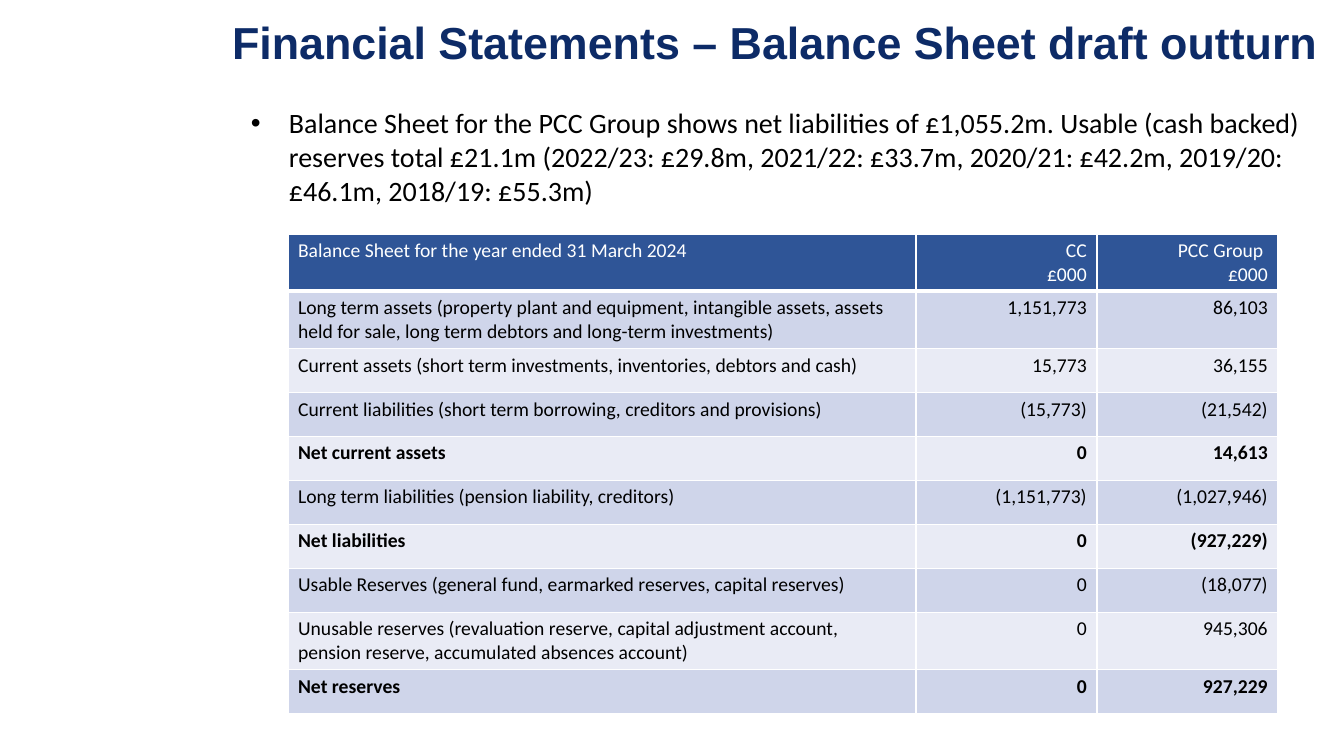
from lxml.etree import SubElement
from pptx import Presentation
from pptx.dml.color import RGBColor
from pptx.enum.text import MSO_ANCHOR, MSO_AUTO_SIZE, PP_ALIGN
from pptx.oxml import parse_xml
from pptx.oxml.ns import nsdecls, qn
from pptx.util import Pt

SLIDE_W, SLIDE_H = 1344, 756
SCALE = 12192000 / SLIDE_W
COLORS = {"navy": "0D2B67", "black": "000000", "white": "FFFFFF",
          "header": "2F5597", "band": "CFD5EA", "light": "E9EBF5"}

TITLE = "Financial Statements – Balance Sheet draft outturn"
SUMMARY = ("Balance Sheet for the PCC Group shows net liabilities of £1,055.2m. "
           "Usable (cash backed) reserves total £21.1m (2022/23: £29.8m, "
           "2021/22: £33.7m, 2020/21: £42.2m, 2019/20: £46.1m, 2018/19: £55.3m)")
COL_WIDTHS = [628, 181, 181]
TALL_ROW, ROW = 57, 44
TALL_ROWS = {0, 1, 8}
BALANCE_SHEET = [
    ("Balance Sheet for the year ended 31 March 2024", "CC\n£000", "PCC Group \n£000"),
    ("Long term assets (property plant and equipment, intangible assets, assets held "
     "for sale, long term debtors and long-term investments)", "1,151,773", "86,103"),
    ("Current assets (short term investments, inventories, debtors and cash)",
     "15,773", "36,155"),
    ("Current liabilities (short term borrowing, creditors and provisions)",
     "(15,773)", "(21,542)"),
    ("Net current assets", "0", "14,613"),
    ("Long term liabilities (pension liability, creditors)",
     "(1,151,773)", "(1,027,946)"),
    ("Net liabilities", "0", "(927,229)"),
    ("Usable Reserves (general fund, earmarked reserves, capital reserves)",
     "0", "(18,077)"),
    ("Unusable reserves (revaluation reserve, capital adjustment account, pension "
     "reserve, accumulated absences account)", "0", "945,306"),
    ("Net reserves", "0", "927,229"),
]


def px(n):
    return round(n * SCALE)


def rgb(name):
    return RGBColor.from_string(COLORS[name])


def write(tf, text, size=14, font="Calibri", color="black", bold=False,
          align=PP_ALIGN.LEFT, spacing=None):
    """Fill a text frame, one paragraph per line of text."""
    tf.word_wrap = True
    for i, line in enumerate(text.split("\n")):
        p = tf.paragraphs[0] if i == 0 else tf.add_paragraph()
        p.alignment = align
        if spacing:
            p.line_spacing = spacing
        r = p.add_run()
        r.text = line
        r.font.size, r.font.name, r.font.bold = Pt(size), font, bold
        r.font.color.rgb = rgb(color)


def set_borders(cell, bottom):
    tcPr = cell._tc.get_or_add_tcPr()
    for i, (side, width) in enumerate(zip("LRTB", (1, 1, 1, bottom))):
        tcPr.insert(i, parse_xml(
            f'<a:ln{side} {nsdecls("a")} w="{Pt(width)}"><a:solidFill>'
            f'<a:srgbClr val="{COLORS["white"]}"/></a:solidFill></a:ln{side}>'))


def add_title(slide, x, y, w, h):
    sp = slide.shapes.title
    sp.left, sp.top, sp.width, sp.height = map(px, (x, y, w, h))
    tf = sp.text_frame
    tf.vertical_anchor = MSO_ANCHOR.MIDDLE
    tf.auto_size = MSO_AUTO_SIZE.NONE
    write(tf, TITLE, size=32, font="Arial", color="navy", bold=True, spacing=0.9)


def add_summary(slide, x, y, w, h):
    tf = slide.shapes.add_textbox(*map(px, (x, y, w, h))).text_frame
    tf.auto_size = MSO_AUTO_SIZE.SHAPE_TO_FIT_TEXT
    pPr = tf.paragraphs[0]._p.get_or_add_pPr()
    pPr.set("marL", str(px(57)))
    pPr.set("indent", str(-px(38)))
    SubElement(pPr, qn("a:buFont"), typeface="Arial")
    SubElement(pPr, qn("a:buChar"), char="•")
    write(tf, SUMMARY, size=20)


def add_balance_sheet(slide, x, y):
    heights = [TALL_ROW if i in TALL_ROWS else ROW for i in range(len(BALANCE_SHEET))]
    table = slide.shapes.add_table(
        len(heights), len(COL_WIDTHS),
        *map(px, (x, y, sum(COL_WIDTHS), sum(heights)))).table
    for col, width in zip(table.columns, COL_WIDTHS):
        col.width = px(width)
    for i, values in enumerate(BALANCE_SHEET):
        table.rows[i].height = px(heights[i])
        header = i == 0
        fill = "header" if header else "band" if i % 2 else "light"
        for j, value in enumerate(values):
            cell = table.cell(i, j)
            cell.fill.solid()
            cell.fill.fore_color.rgb = rgb(fill)
            set_borders(cell, bottom=3 if header else 1)
            write(cell.text_frame, value, color="white" if header else "black",
                  bold=values[0].startswith("Net "),
                  align=PP_ALIGN.RIGHT if j else PP_ALIGN.LEFT)


def main():
    prs = Presentation()
    prs.slide_width, prs.slide_height = px(SLIDE_W), px(SLIDE_H)
    slide = prs.slides.add_slide(prs.slide_layouts[5])
    add_title(slide, 222, 13, 1112, 64)
    add_summary(slide, 222, 101, 1112, 112)
    add_balance_sheet(slide, 288, 234)
    prs.save("out.pptx")


if __name__ == "__main__":
    main()
